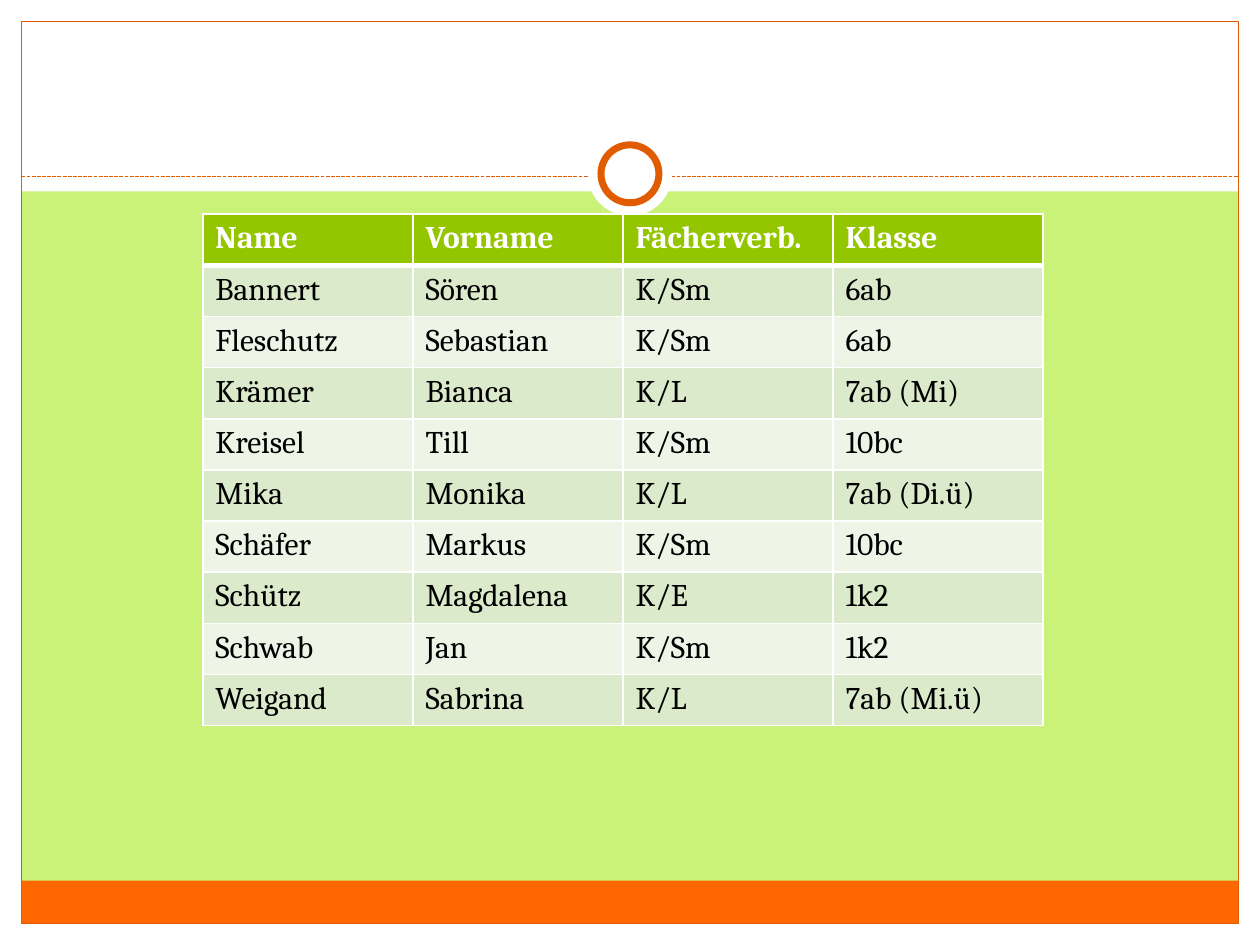
from dataclasses import dataclass
from typing import Optional

from lxml import etree
from pptx import Presentation
from pptx.dml.color import RGBColor
from pptx.enum.dml import MSO_LINE
from pptx.enum.shapes import MSO_CONNECTOR, MSO_SHAPE
from pptx.oxml.ns import qn
from pptx.util import Inches, Pt

RECTANGLE = MSO_SHAPE.RECTANGLE
OVAL = MSO_SHAPE.OVAL
STRAIGHT = MSO_CONNECTOR.STRAIGHT
SHORT_DASH = MSO_LINE.SQUARE_DOT

COLORS = {
    "background": "CAF278", "white": "FFFFFF", "footer": "FF6700",
    "accent": "E15B00", "header": "94C600", "odd": "DCEACC",
    "even": "EEF5E7", "text": "000000",
}

# Slide measures in inches
WIDTH, HEIGHT = 10, 7.5
MARGIN = 0.17
INNER_WIDTH = WIDTH - 2 * MARGIN
INNER_HEIGHT = HEIGHT - 2 * MARGIN
TITLE_HEIGHT = 1.52
FOOTER_HEIGHT = 0.34
DIVIDER_TOP = 1.4
RING_CENTER = 1.38
TABLE_LEFT, TABLE_TOP = 1.61, 1.7
TABLE_WIDTH, TABLE_HEIGHT = 6.67, 4.06

ROWS = [
    ("Name", "Vorname", "Fächerverb.", "Klasse"),
    ("Bannert", "Sören", "K/Sm", "6ab"),
    ("Fleschutz", "Sebastian", "K/Sm", "6ab"),
    ("Krämer", "Bianca", "K/L", "7ab (Mi)"),
    ("Kreisel", "Till", "K/Sm", "10bc"),
    ("Mika", "Monika", "K/L", "7ab (Di.ü)"),
    ("Schäfer", "Markus", "K/Sm", "10bc"),
    ("Schütz", "Magdalena", "K/E", "1k2"),
    ("Schwab", "Jan", "K/Sm", "1k2"),
    ("Weigand", "Sabrina", "K/L", "7ab (Mi.ü)"),
]


@dataclass
class Block:
    left: float
    top: float
    width: float
    height: float
    fill: Optional[str] = None
    line_width: float = 0
    kind: MSO_SHAPE = RECTANGLE


def circle(diameter: float, line_width: float = 0) -> Block:
    """White circle centred on the divider."""
    return Block((WIDTH - diameter) / 2, RING_CENTER - diameter / 2,
                 diameter, diameter, "white", line_width, OVAL)


BLOCKS = [
    # White margins and title band
    Block(0, HEIGHT - MARGIN, WIDTH, MARGIN, "white"),
    Block(0, 0, WIDTH, TITLE_HEIGHT, "white"),
    Block(0, 0, MARGIN, HEIGHT, "white"),
    Block(WIDTH - MARGIN, 0, MARGIN, HEIGHT, "white"),
    # Footer bar and frame
    Block(MARGIN, HEIGHT - MARGIN - FOOTER_HEIGHT, INNER_WIDTH, FOOTER_HEIGHT, "footer"),
    Block(MARGIN, MARGIN, INNER_WIDTH, INNER_HEIGHT, line_width=0.75),
]
RING = [circle(0.67), circle(0.46, 4)]


def color(name: str) -> RGBColor:
    return RGBColor.from_string(COLORS[name])


def paint(fill, name: Optional[str]) -> None:
    if name is None:
        fill.background()
    else:
        fill.solid()
        fill.fore_color.rgb = color(name)


def draw_block(slide, block: Block) -> None:
    lengths = (block.left, block.top, block.width, block.height)
    shape = slide.shapes.add_shape(block.kind, *map(Inches, lengths))
    shape.shadow.inherit = False
    paint(shape.fill, block.fill)
    paint(shape.line.fill, "accent" if block.line_width else None)
    if block.line_width:
        shape.line.width = Pt(block.line_width)


def draw_divider(slide) -> None:
    ends = (MARGIN, DIVIDER_TOP, WIDTH - MARGIN, DIVIDER_TOP)
    connector = slide.shapes.add_connector(STRAIGHT, *map(Inches, ends))
    connector.line.color.rgb = color("accent")
    connector.line.width = Pt(0.75)
    connector.line.dash_style = SHORT_DASH
    properties = connector._element.find(qn("p:spPr"))
    etree.SubElement(properties, qn("a:effectLst"))


def add_borders(cell, widths: dict[str, float]) -> None:
    properties = cell._tc.get_or_add_tcPr()
    for side, width in widths.items():
        line = etree.SubElement(properties, qn(f"a:ln{side}"), w=str(Pt(width)))
        solid = etree.SubElement(line, qn("a:solidFill"))
        etree.SubElement(solid, qn("a:srgbClr"), val=COLORS["white"])


def draw_table(slide) -> None:
    lengths = (TABLE_LEFT, TABLE_TOP, TABLE_WIDTH, TABLE_HEIGHT)
    table = slide.shapes.add_table(len(ROWS), len(ROWS[0]), *map(Inches, lengths)).table
    for row_index, values in enumerate(ROWS):
        is_header = row_index == 0
        fill = "header" if is_header else ("even", "odd")[row_index % 2]
        text_format = {"name": "Cambria", "size": Pt(18), "bold": is_header}
        borders = {"L": 1, "R": 1, "T": 3 if row_index == 1 else 1,
                   "B": 3 if is_header else 1}
        for column_index, value in enumerate(values):
            cell = table.cell(row_index, column_index)
            add_borders(cell, borders)
            paint(cell.fill, fill)
            cell.text = value
            font = cell.text_frame.paragraphs[0].runs[0].font
            for attribute, setting in text_format.items():
                setattr(font, attribute, setting)
            font.color.rgb = color("white" if is_header else "text")


def main() -> None:
    presentation = Presentation()
    presentation.slide_width = Inches(WIDTH)
    presentation.slide_height = Inches(HEIGHT)
    slide = presentation.slides.add_slide(presentation.slide_layouts[6])
    paint(slide.background.fill, "background")

    for block in BLOCKS:
        draw_block(slide, block)
    draw_divider(slide)
    for block in RING:
        draw_block(slide, block)
    draw_table(slide)
    presentation.save("out.pptx")


if __name__ == "__main__":
    main()
